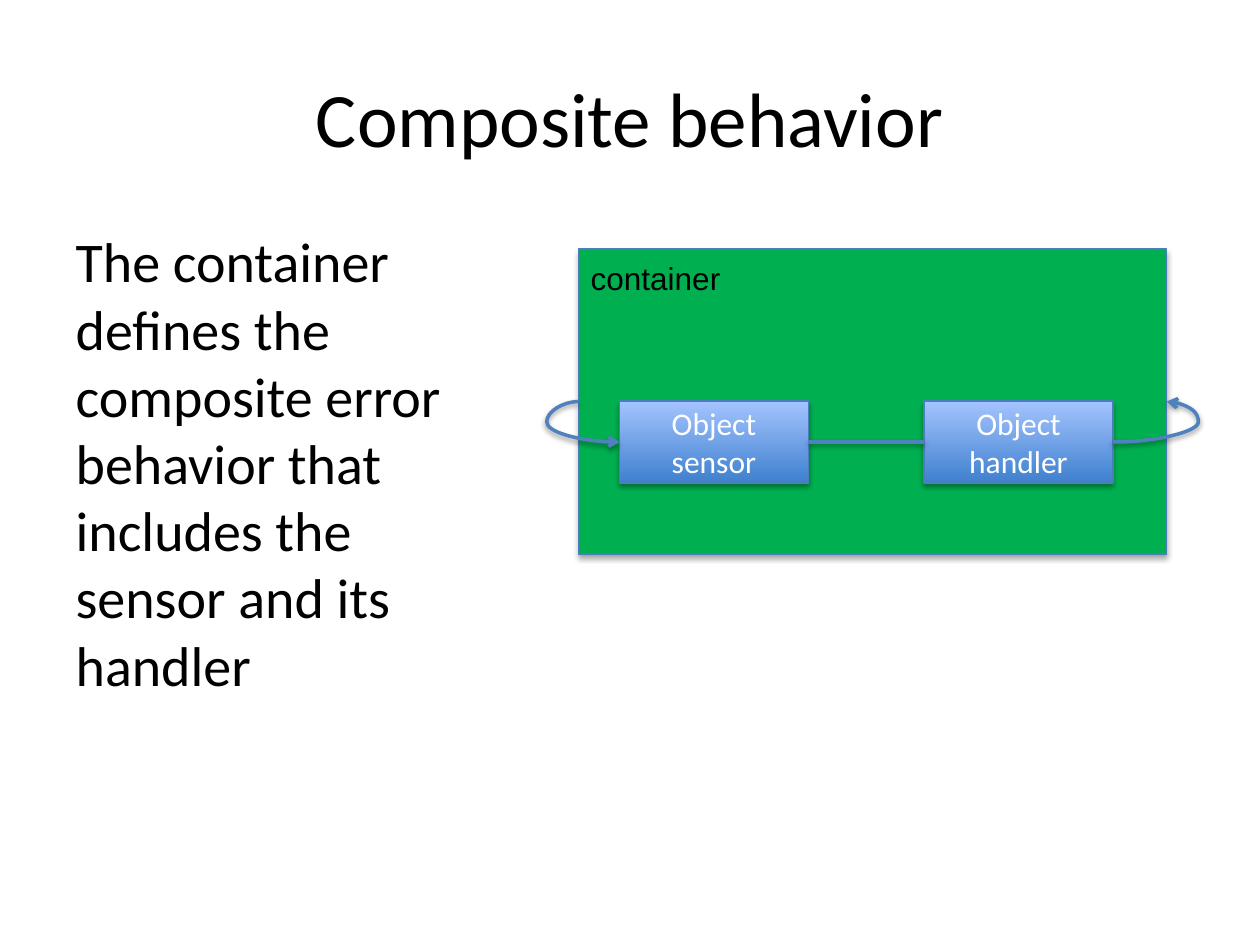
import dataclasses
from typing import Optional

import lxml.etree
import pptx
import pptx.dml.color
import pptx.enum.shapes
import pptx.enum.text
import pptx.oxml.ns
import pptx.util

Pt = pptx.util.Pt
qn = pptx.oxml.ns.qn

COLORS = {
    "text": "000000",
    "object_text": "FFFFFF",
    "container": "00B050",
    "outline": "4B7EBC",
    "object_bottom": "3F80CE",
    "object_top": "A4C4FF",
    "link": "4F81BD",
    "shadow": "000000",
}
LEFT_SITE, RIGHT_SITE = 1, 3


@dataclasses.dataclass
class Box:
    left: float
    top: float
    width: float
    height: float

    def lengths(self) -> tuple:
        return tuple(Pt(value) for value in dataclasses.astuple(self))


@dataclasses.dataclass
class Link:
    source: object
    source_site: int
    target: object
    target_site: int
    bend: Optional[float] = None


def rgb(name: str) -> pptx.dml.color.RGBColor:
    return pptx.dml.color.RGBColor.from_string(COLORS[name])


def style_paragraph(paragraph, size: float, font: str, color: str) -> None:
    paragraph.font.size = Pt(size)
    paragraph.font.name = font
    paragraph.font.color.rgb = rgb(color)


def add_shadow(properties, distance: float, opacity: int) -> None:
    effects = lxml.etree.SubElement(properties, qn("a:effectLst"))
    shadow = lxml.etree.SubElement(
        effects, qn("a:outerShdw"), blurRad=str(Pt(3.1)), dist=str(Pt(distance)),
        dir="5400000", rotWithShape="0")
    color = lxml.etree.SubElement(shadow, qn("a:srgbClr"), val=COLORS["shadow"])
    lxml.etree.SubElement(color, qn("a:alpha"), val=str(opacity * 1000))


def add_rectangle(slide, box: Box):
    rectangle = slide.shapes.add_shape(
        pptx.enum.shapes.MSO_SHAPE.RECTANGLE, *box.lengths())
    rectangle.line.color.rgb = rgb("outline")
    rectangle.line.width = Pt(0.75)
    add_shadow(rectangle.element.spPr, 1.8, 35)
    return rectangle


def add_container(slide, box: Box):
    container = add_rectangle(slide, box)
    container.fill.solid()
    container.fill.fore_color.rgb = rgb("container")
    return container


def add_object(slide, box: Box, words: tuple):
    card = add_rectangle(slide, box)
    card.fill.gradient()
    card.fill.gradient_angle = 90
    for stop, color in zip(card.fill.gradient_stops, ("object_bottom", "object_top")):
        stop.color.rgb = rgb(color)
    card.text_frame.vertical_anchor = pptx.enum.text.MSO_ANCHOR.MIDDLE
    card.text_frame.text = "\n".join(words)
    for paragraph in card.text_frame.paragraphs:
        paragraph.alignment = pptx.enum.text.PP_ALIGN.CENTER
        style_paragraph(paragraph, 18, "Calibri", "object_text")
    return card


def add_link(slide, link: Link) -> None:
    kinds = pptx.enum.shapes.MSO_CONNECTOR
    kind = kinds.STRAIGHT if link.bend is None else kinds.CURVE
    connector = slide.shapes.add_connector(kind, 0, 0, 0, 0)
    connector.begin_connect(link.source, link.source_site)
    connector.end_connect(link.target, link.target_site)
    connector.line.color.rgb = rgb("link")
    connector.line.width = Pt(2)
    properties = connector.element.spPr
    if link.bend is not None:
        guides = properties.find(qn("a:prstGeom")).find(qn("a:avLst"))
        lxml.etree.SubElement(
            guides, qn("a:gd"), name="adj1", fmla=f"val {round(link.bend * 100000)}")
        lxml.etree.SubElement(properties.find(qn("a:ln")), qn("a:tailEnd"), type="arrow")
    add_shadow(properties, 1.6, 38)


def fill_placeholder(placeholder, box: Box, text: str, size: float):
    placeholder.left, placeholder.top, placeholder.width, placeholder.height = box.lengths()
    placeholder.text_frame.text = text
    paragraph = placeholder.text_frame.paragraphs[0]
    style_paragraph(paragraph, size, "Calibri", "text")
    return paragraph


def remove_bullet(paragraph) -> None:
    properties = paragraph._p.get_or_add_pPr()
    properties.set("marL", "0")
    properties.set("indent", "0")
    properties.insert(0, lxml.etree.Element(qn("a:buNone")))


def add_label(slide, box: Box, text: str) -> None:
    frame = slide.shapes.add_textbox(*box.lengths()).text_frame
    frame.word_wrap = False
    frame.auto_size = pptx.enum.text.MSO_AUTO_SIZE.SHAPE_TO_FIT_TEXT
    frame.text = text
    style_paragraph(frame.paragraphs[0], 18, "Arial", "text")


def main() -> None:
    presentation = pptx.Presentation()
    presentation.slide_width, presentation.slide_height = Pt(720), Pt(540)
    slide = presentation.slides.add_slide(presentation.slide_layouts[1])

    fill_placeholder(
        slide.shapes.title, Box(36, 21.6, 648, 90), "Composite behavior", 44)
    description = fill_placeholder(
        slide.placeholders[1], Box(36, 126, 252, 356.4),
        "The container defines the composite error behavior that includes "
        "the sensor and its handler", 32)
    remove_bullet(description)

    container = add_container(slide, Box(330.5, 142.3, 336.2, 174.4))
    sensor, handler = (
        add_object(slide, Box(left, 229.2, 108, 46.8), ("Object", role))
        for left, role in ((354, "sensor"), (528, "handler")))
    add_label(slide, Box(330.5, 144.7, 89.3, 28.8), "container")

    for link in (
        Link(sensor, RIGHT_SITE, handler, LEFT_SITE),
        Link(container, LEFT_SITE, sensor, LEFT_SITE, -0.77),
        Link(handler, RIGHT_SITE, container, RIGHT_SITE, 1.59),
    ):
        add_link(slide, link)

    presentation.save("out.pptx")


if __name__ == "__main__":
    main()
